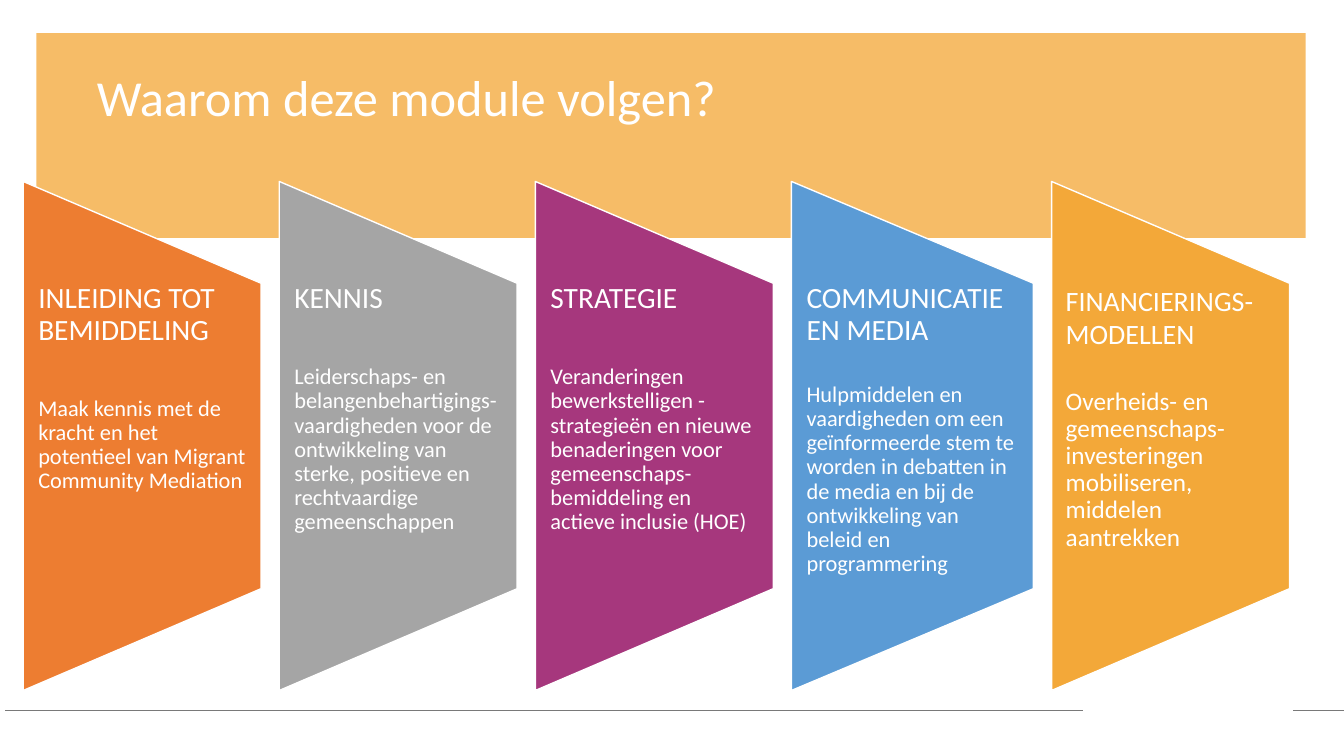
from pptx import Presentation
from pptx.dml.color import RGBColor
from pptx.enum.shapes import MSO_CONNECTOR, MSO_SHAPE
from pptx.enum.text import MSO_ANCHOR, MSO_AUTO_SIZE, PP_ALIGN
from pptx.oxml.ns import qn
from pptx.util import Inches, Pt
from lxml import etree

RECT = MSO_SHAPE.RECTANGLE
TRAPEZOID = MSO_SHAPE.FLOWCHART_MANUAL_OPERATION
STRAIGHT = MSO_CONNECTOR.STRAIGHT
TOP = MSO_ANCHOR.TOP
NO_FIT = MSO_AUTO_SIZE.NONE
LEFT = PP_ALIGN.LEFT

WHITE = "FFFFFF"
PANEL_TOP, PANEL_HEIGHT, GAP = 1.8, 5.05, 0.18
PANELS = [
    dict(width=2.36, fill="ED7D31", heading="INLEIDING TOT BEMIDDELING",
         body="Maak kennis met de kracht en het potentieel van Migrant Community Mediation"),
    dict(width=2.36, fill="A5A5A5", heading="KENNIS",
         body="Leiderschaps- en belangenbehartigings-vaardigheden voor de ontwikkeling "
              "van sterke, positieve en rechtvaardige gemeenschappen"),
    dict(width=2.36, fill="A6377D", heading="STRATEGIE",
         body="Veranderingen bewerkstelligen - strategieën en nieuwe benaderingen voor "
              "gemeenschaps-bemiddeling en actieve inclusie (HOE)"),
    dict(width=2.4, fill="5B9BD5", heading="COMMUNICATIE EN MEDIA", space=26,
         body="Hulpmiddelen en vaardigheden om een geïnformeerde stem te worden in "
              "debatten in de media en bij de ontwikkeling van beleid en programmering"),
    dict(width=2.36, fill="F3A839", heading="FINANCIERINGS-MODELLEN", space=27,
         sizes=(20, 18), heading_spacing=1.0, inset=0.14,
         body="Overheids- en gemeenschaps-investeringen mobiliseren, middelen aantrekken"),
]


def rgb(value):
    return RGBColor.from_string(value)


class SlideBuilder:
    """Holds the text style and the current slide."""

    def __init__(self, slide, font="Calibri", color=WHITE):
        self.s, self.font, self.color = slide, font, color

    def shape(self, kind, x, y, w, h, fill, line=None, rotation=0):
        sp = self.s.shapes.add_shape(kind, Inches(x), Inches(y), Inches(w), Inches(h))
        sp.shadow.inherit = False
        sp.rotation = rotation
        sp.fill.solid()
        sp.fill.fore_color.rgb = rgb(fill)
        if line:
            sp.line.color.rgb = rgb(line)
            sp.line.width = Pt(1)
        else:
            sp.line.fill.background()
        return sp

    def rule(self, x1, x2, y):
        line = self.s.shapes.add_connector(STRAIGHT, Inches(x1), Inches(y), Inches(x2), Inches(y))
        line.line.color.rgb = rgb("797979")
        line.line.width = Pt(0.5)
        etree.SubElement(line.element.spPr, qn("a:effectLst"))

    def paragraph(self, p, text, size, spacing=0.9, before=0):
        p.text = text
        p.alignment = LEFT
        p.line_spacing = spacing
        p.space_before, p.space_after = Pt(before), Pt(0)
        for r in p.runs:
            r.font.name, r.font.size = self.font, Pt(size)
            r.font.color.rgb = rgb(self.color)

    def title(self, text, x, y, w, h, behind):
        sp = self.s.shapes.title
        sp.left, sp.top, sp.width, sp.height = Inches(x), Inches(y), Inches(w), Inches(h)
        behind.element.addnext(sp.element)
        tf = sp.text_frame
        tf.auto_size = NO_FIT
        tf.vertical_anchor = TOP
        self.paragraph(tf.paragraphs[0], text, 36)

    def panel(self, x, width, fill, heading, body, space=36, sizes=(21, 16),
              heading_spacing=0.9, inset=0.15):
        self.shape(TRAPEZOID, x + (width - PANEL_HEIGHT) / 2,
                   PANEL_TOP + (PANEL_HEIGHT - width) / 2,
                   PANEL_HEIGHT, width, fill, WHITE, 270)
        tf = self.s.shapes.add_textbox(Inches(x), Inches(2.81), Inches(width),
                                       Inches(3.03)).text_frame
        tf.word_wrap = True
        tf.vertical_anchor = TOP
        tf.margin_left = tf.margin_right = Inches(inset)
        tf.margin_top = tf.margin_bottom = 0
        self.paragraph(tf.paragraphs[0], heading, sizes[0], heading_spacing)
        self.paragraph(tf.add_paragraph(), body, sizes[1], before=space)


def main():
    prs = Presentation()
    prs.slide_width, prs.slide_height = Inches(13.33), Inches(7.5)
    b = SlideBuilder(prs.slides.add_slide(prs.slide_layouts[5]))
    band = b.shape(RECT, 0.36, 0.33, 12.59, 2.03, "F6BC67")
    b.title("Waarom deze module volgen?", 0.86, 0.67, 11.55, 0.76, band)
    b.rule(10.74, 0.05, 7.05)
    b.rule(13.33, 12.82, 7.05)
    x = 0.23
    for panel in PANELS:
        b.panel(x, **panel)
        x += panel["width"] + GAP
    prs.save("out.pptx")


if __name__ == "__main__":
    main()
